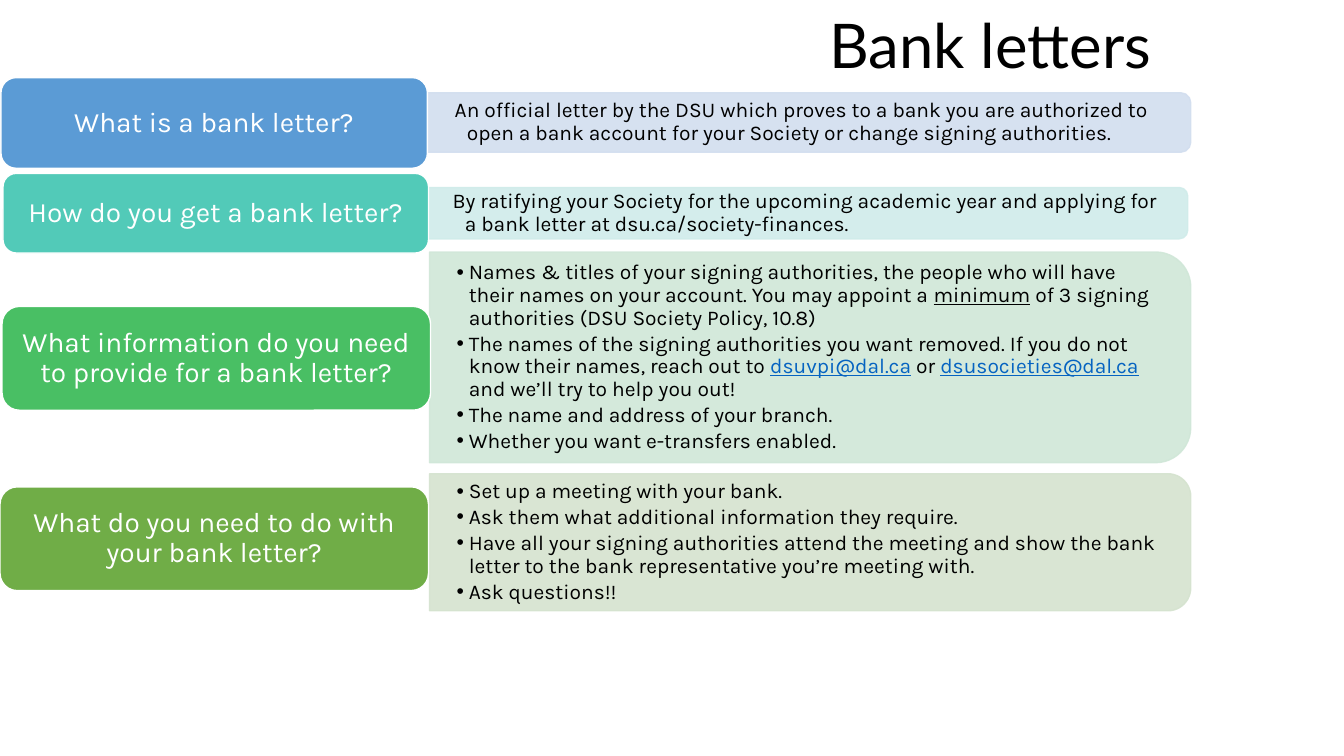
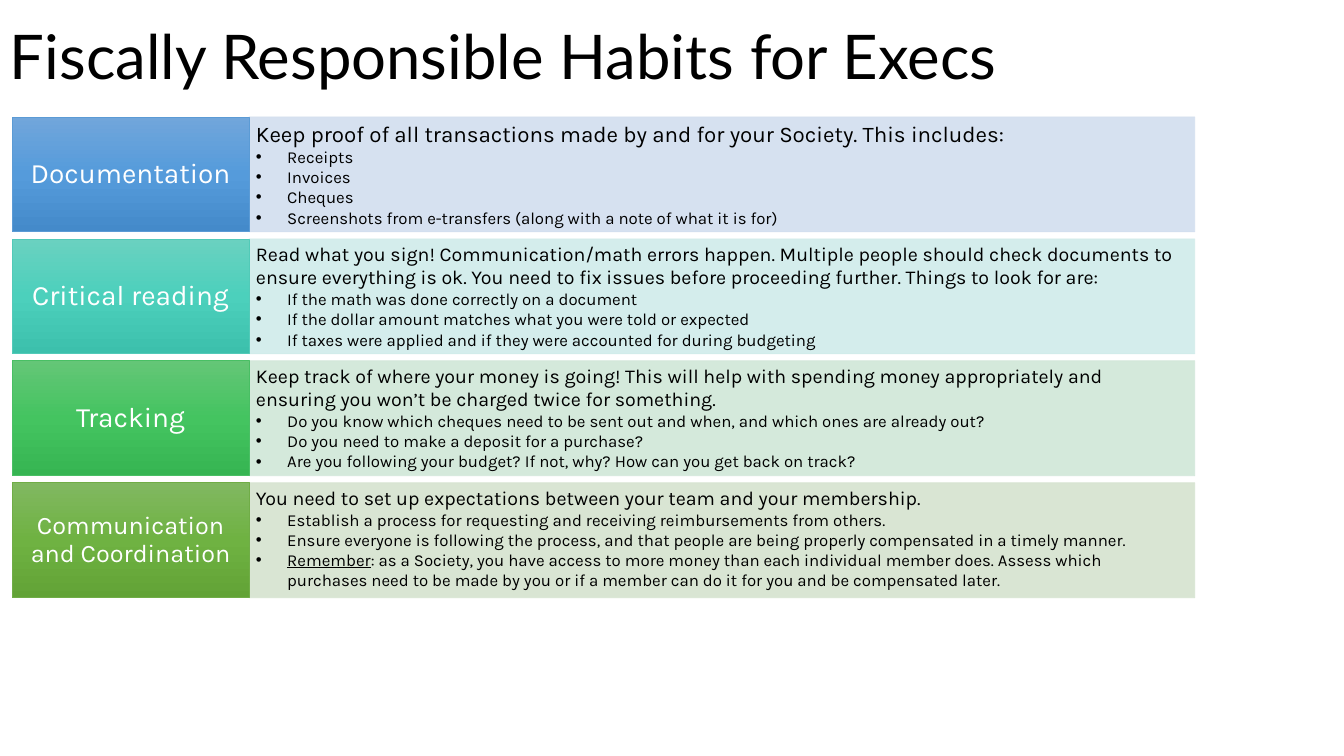
from copy import deepcopy

from lxml import etree
from pptx import Presentation
from pptx.dml.color import RGBColor
from pptx.enum import shapes, text
from pptx.oxml.ns import qn
from pptx.util import Inches, Pt

KIND = shapes.MSO_SHAPE
ALIGN = text.PP_ALIGN
ANCHOR = text.MSO_ANCHOR
HEAD, BODY = "Lato", "Karla"


def rgb(code):
    return RGBColor.from_string(code)


BLACK, WHITE, LINK = rgb("000000"), rgb("FFFFFF"), rgb("0563C1")

# Row themes: strong colour, pale colour, gradient from top to bottom
THEMES = [
    (rgb("5B9BD5"), rgb("D2DEEF"), [rgb("71A6DB"), rgb("559BDB"), rgb("448ACA")]),
    (rgb("52CAB8"), rgb("D0ECEA"), [rgb("6AD1C0"), rgb("4CD0BC"), rgb("3CC0AC")]),
    (rgb("49BF64"), rgb("D0E7D8"), [rgb("64C677"), rgb("44C460"), rgb("36B552")]),
    (rgb("70AD47"), rgb("D5E3CF"), [rgb("81B861"), rgb("6FB242"), rgb("62A336")]),
]

# Slide 1: label, label box, panel box, text width, bulleted, paragraphs.
# A paragraph is a string or a list of parts; a (string, colour) part is underlined.
LETTERS = [
    ("What is a bank letter?", (0.01, 0.77, 4.23, 0.9),
     (4.24, 0.92, 7.57, 0.59), 7.54, False,
     ["An official letter by the DSU which proves to a bank you are authorized to "
      "open a bank account for your Society or change signing authorities."]),
    ("How do you get a bank letter?", (0.03, 1.72, 4.22, 0.79),
     (4.22, 1.86, 7.56, 0.51), 7.54, False,
     ["By ratifying your Society for the upcoming academic year and applying for "
      "a bank letter at dsu.ca/society-finances."]),
    ("What information do you need to provide for a bank letter?",
     (0.02, 3.04, 4.25, 1.03), (4.26, 2.5, 7.55, 2.09), 7.45, True,
     [["Names & titles of your signing authorities, the people who will have their "
       "names on your account. You may appoint a ", ("minimum", BLACK),
       " of 3 signing authorities (DSU Society Policy, 10.8)"],
      ["The names of the signing authorities you want removed. If you do not know "
       "their names, reach out to ", ("dsuvpi@dal.ca", LINK), " or ",
       ("dsusocieties@dal.ca", LINK), " and we’ll try to help you out!"],
      "The name and address of your branch.",
      "Whether you want e-transfers enabled."]),
    ("What do you need to do with your bank letter?",
     (0, 4.83, 4.25, 1.03), (4.26, 4.7, 7.55, 1.36), 7.49, True,
     ["Set up a meeting with your bank.",
      "Ask them what additional information they require.",
      "Have all your signing authorities attend the meeting and show the bank letter "
      "to the bank representative you’re meeting with.",
      "Ask questions!!"]),
]

# Slide 2: label, label size, lead, lead size, points
HABITS = [
    ("Documentation", 20,
     "Keep proof of all transactions made by and for your Society. This includes:", 16,
     ["Receipts", "Invoices", "Cheques",
      "Screenshots from e-transfers (along with a note of what it is for)"]),
    ("Critical reading", 20,
     "Read what you sign! Communication/math errors happen. Multiple people should "
     "check documents to ensure everything is ok. You need to fix issues before "
     "proceeding further. Things to look for are:", 14,
     ["If the math was done correctly on a document",
      "If the dollar amount matches what you were told or expected",
      "If taxes were applied and if they were accounted for during budgeting"]),
    ("Tracking", 20,
     "Keep track of where your money is going! This will help with spending money "
     "appropriately and ensuring you won’t be charged twice for something.", 14,
     ["Do you know which cheques need to be sent out and when, and which ones are "
      "already out?",
      "Do you need to make a deposit for a purchase?",
      "Are you following your budget? If not, why? How can you get back on track?"]),
    ("Communication and Coordination", 18,
     "You need to set up expectations between your team and your membership.", 14,
     ["Establish a process for requesting and receiving reimbursements from others.",
      "Ensure everyone is following the process, and that people are being properly "
      "compensated in a timely manner.",
      [("Remember", BLACK),
       ": as a Society, you have access to more money than each individual member "
       "does. Assess which purchases need to be made by you or if a member can do it "
       "for you and be compensated later."]]),
]


def write(shape, paras, size, font=BODY, color=BLACK, align=ALIGN.LEFT,
          anchor=ANCHOR.MIDDLE, pad=(0.1, 0.05), lines=0.9, after=0,
          hang=0, bullet=False):
    """Add paragraphs to a shape or text box."""
    frame = shape.text_frame
    frame.word_wrap = True
    frame.vertical_anchor = anchor
    frame.margin_left = frame.margin_right = Inches(pad[0])
    frame.margin_top = frame.margin_bottom = Inches(pad[1])
    for item in paras:
        first = frame.paragraphs[0]
        para = frame.add_paragraph() if first.runs else first
        para.alignment = align
        para.line_spacing = lines
        para.space_after = Pt(after)
        props = para._p.get_or_add_pPr()
        if hang:
            props.set("marL", str(Inches(hang)))
            props.set("indent", str(-Inches(hang)))
        if bullet:
            etree.SubElement(props, qn("a:buFont")).set("typeface", "Arial")
            etree.SubElement(props, qn("a:buChar")).set("char", "•")
        for part in [item] if isinstance(item, str) else item:
            plain = isinstance(part, str)
            run = para.add_run()
            run.text = part if plain else part[0]
            run.font.name = font
            run.font.size = Pt(size)
            run.font.color.rgb = color if plain else part[1]
            if not plain:
                run.font.underline = True


def text_box(slide, box):
    return slide.shapes.add_textbox(*map(Inches, box))


def block(slide, kind, box, fill, line, width):
    """Draw a shape; a list of colours as fill makes a vertical gradient."""
    shape = slide.shapes.add_shape(kind, *map(Inches, box))
    shape.shadow.inherit = False
    shape.line.color.rgb = line
    shape.line.width = Pt(width)
    if isinstance(fill, list):
        shape.fill.gradient()
        shape.fill.gradient_angle = 270
        stops = shape._element.spPr.find(".//" + qn("a:gsLst"))
        stops.append(deepcopy(stops[-1]))
        for i, stop in enumerate(shape.fill.gradient_stops):
            stop.position = i / (len(fill) - 1)
            stop.color.rgb = fill[i]
    else:
        shape.fill.solid()
        shape.fill.fore_color.rgb = fill
    return shape


def panel(slide, kind, box, color, width):
    """Draw a pale shape whose fill and line are 90 % opaque."""
    shape = block(slide, kind, box, color, color, width)
    for node in shape._element.spPr.iter(qn("a:srgbClr")):
        etree.SubElement(node, qn("a:alpha")).set("val", "90000")
    return shape


def new_slide(deck, title, box):
    slide = deck.slides.add_slide(deck.slide_layouts[6])
    write(text_box(slide, box), [title], 44, font=HEAD)
    return slide


def letters(deck):
    slide = new_slide(deck, "Bank letters", (8.13, 0, 3.68, 0.96))
    for row, (strong, pale, _) in zip(LETTERS, THEMES):
        label, spot, (x, y, w, h), wide, bullet, paras = row
        # Panel: top-rounded shape turned to round its right side
        turned = (x + (w - h) / 2, y + (h - w) / 2, h, w)
        panel(slide, KIND.ROUND_2_SAME_RECTANGLE, turned, pale, 1).rotation = 90
        write(text_box(slide, (x, y, wide, h)), paras, 15, pad=(0.27, 0),
              after=2.25, hang=0.12, bullet=bullet)
        # Label
        tab = block(slide, KIND.ROUNDED_RECTANGLE, spot, strong, WHITE, 1)
        write(tab, [label], 20, color=WHITE, align=ALIGN.CENTER, pad=(0.08, 0.04))


def habits(deck):
    slide = new_slide(deck, "Fiscally Responsible Habits for Execs",
                      (0, 0, 10.9, 1.18))
    left, top, step, wide, high = 0.12, 1.16, 1.21, 2.35, 1.14
    for i, (row, theme) in enumerate(zip(HABITS, THEMES)):
        label, size, lead, big, points = row
        strong, pale, shades = theme
        y = top + i * step
        # Panel and label
        panel(slide, KIND.RECTANGLE, (left + wide, y, 9.38, high), pale, 0.5)
        tab = block(slide, KIND.RECTANGLE, (left, y, wide, high), shades, strong, 0.5)
        write(tab, [label], size, color=WHITE, align=ALIGN.CENTER, pad=(0.12, 0.11))
        # Lead and points
        note = text_box(slide, (2.44, y - 0.02, 9.42, 1.18))
        write(note, [lead], big, anchor=ANCHOR.TOP, lines=1.0)
        write(note, points, 12, anchor=ANCHOR.TOP, lines=1.0, hang=0.31, bullet=True)


def main():
    deck = Presentation()
    deck.slide_width, deck.slide_height = Inches(13.33), Inches(7.5)
    letters(deck)
    habits(deck)
    deck.save("out.pptx")


if __name__ == "__main__":
    main()
